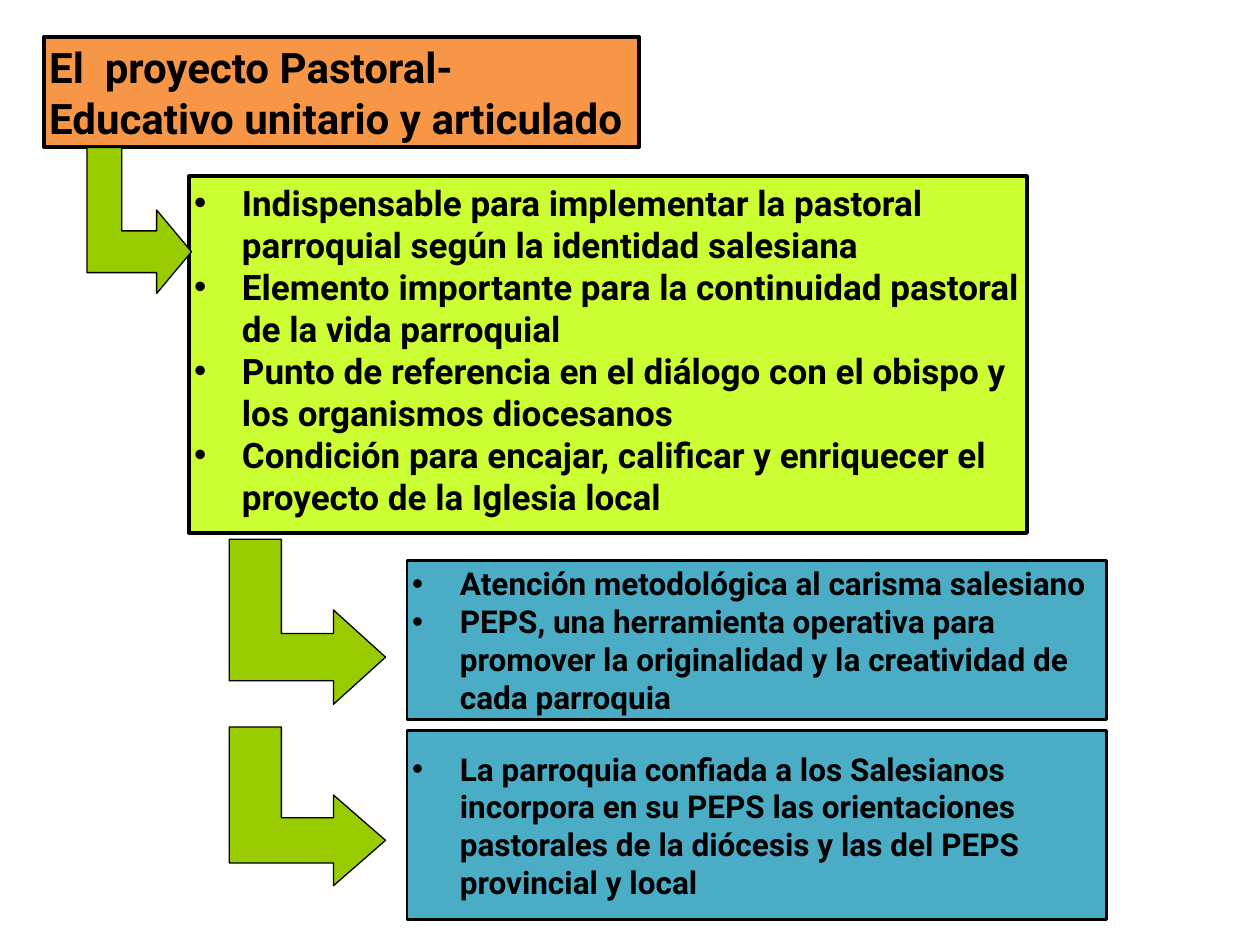
from lxml.etree import SubElement
from pptx import Presentation
from pptx.dml.color import RGBColor
from pptx.enum.shapes import MSO_SHAPE
from pptx.enum.text import MSO_ANCHOR, MSO_AUTO_SIZE, PP_ALIGN
from pptx.oxml.ns import qn
from pptx.util import Inches, Pt

COLORS = {
    "ink": "000000",
    "title": "F79646",
    "list": "CCFF33",
    "detail": "4BACC6",
    "arrow": "99CC00",
}
FONT = "Roboto"
TITLE = "El  proyecto Pastoral-Educativo unitario y articulado"
REASONS = [
    "Indispensable para implementar la pastoral parroquial según la identidad salesiana",
    "Elemento importante para la continuidad pastoral de la vida parroquial",
    "Punto de referencia en el diálogo con el obispo y los organismos diocesanos",
    "Condición para encajar, calificar y enriquecer el proyecto de la Iglesia local",
]
DETAILS = [
    ((3.23, 4.45, 5.55, 1.26), [
        "Atención metodológica al carisma salesiano",
        "PEPS, una herramienta operativa para promover la originalidad y la creatividad de cada parroquia",
    ]),
    ((3.23, 5.8, 5.55, 1.5), [
        "La parroquia confiada a los Salesianos incorpora en su PEPS las orientaciones "
        "pastorales de la diócesis y las del PEPS provincial y local",
    ]),
]
ARROWS = [
    (0.69, 1.17, 0.83, 1.16),
    (1.82, 4.28, 1.24, 1.31),
    (1.82, 5.77, 1.24, 1.26),
]


def paint(shape, fill, line_width):
    shape.fill.solid()
    shape.fill.fore_color.rgb = RGBColor.from_string(COLORS[fill])
    shape.line.color.rgb = RGBColor.from_string(COLORS["ink"])
    shape.line.width = Pt(line_width)


def place(shape, box):
    shape.left, shape.top, shape.width, shape.height = map(Inches, box)


def add_bullet(para):
    properties = para._p.get_or_add_pPr()
    properties.set("marL", str(Inches(0.38)))
    properties.set("indent", str(-Inches(0.38)))
    SubElement(properties, qn("a:buFont"), typeface="Arial")
    SubElement(properties, qn("a:buChar"), char="•")


def write(shape, lines, size, anchor, bulleted=True):
    frame = shape.text_frame
    frame.text = "\n".join(lines)
    frame.word_wrap = True
    frame.auto_size = MSO_AUTO_SIZE.NONE
    frame.vertical_anchor = anchor
    frame.margin_left = frame.margin_right = Inches(0.04)
    frame.margin_top = frame.margin_bottom = Inches(0.04)
    for para in frame.paragraphs:
        para.alignment = PP_ALIGN.LEFT
        para.line_spacing = 1.0
        para.space_before = Pt(0)
        if bulleted:
            add_bullet(para)
        for span in para.runs:
            span.font.name = FONT
            span.font.size = Pt(size)
            span.font.bold = True
            span.font.color.rgb = RGBColor.from_string(COLORS["ink"])


def fill_title(page, box):
    title = page.shapes.title
    place(title, box)
    paint(title, "title", 2.25)
    write(title, [TITLE], 24, MSO_ANCHOR.TOP, bulleted=False)


def fill_reasons(page, box):
    body = page.placeholders[1]
    place(body, box)
    paint(body, "list", 2.25)
    write(body, REASONS, 20, MSO_ANCHOR.TOP)


def add_detail(page, box, lines):
    panel = page.shapes.add_shape(MSO_SHAPE.RECTANGLE, *map(Inches, box))
    panel.shadow.inherit = False
    paint(panel, "detail", 1.5)
    write(panel, lines, 18, MSO_ANCHOR.MIDDLE)


def add_bent_arrow(page, box):
    left, top, width, height = box
    corners = [(3, 5), (2, 3), (2, 4), (1, 4), (1, 0), (0, 0), (0, 6), (2, 6), (2, 7)]
    points = [
        (Inches(left + width * column / 3), Inches(top + height * row / 7))
        for column, row in corners
    ]
    builder = page.shapes.build_freeform(*points[0])
    builder.add_line_segments(points[1:], close=True)
    arrow = builder.convert_to_shape()
    arrow.shadow.inherit = False
    paint(arrow, "arrow", 0.75)


def main():
    deck = Presentation()
    deck.slide_width, deck.slide_height = Inches(10), Inches(7.5)
    page = deck.slides.add_slide(deck.slide_layouts[1])
    fill_title(page, (0.35, 0.29, 4.72, 0.88))
    fill_reasons(page, (1.5, 1.4, 6.65, 2.83))
    for box, lines in DETAILS:
        add_detail(page, box, lines)
    for box in ARROWS:
        add_bent_arrow(page, box)
    deck.save("out.pptx")


if __name__ == "__main__":
    main()
